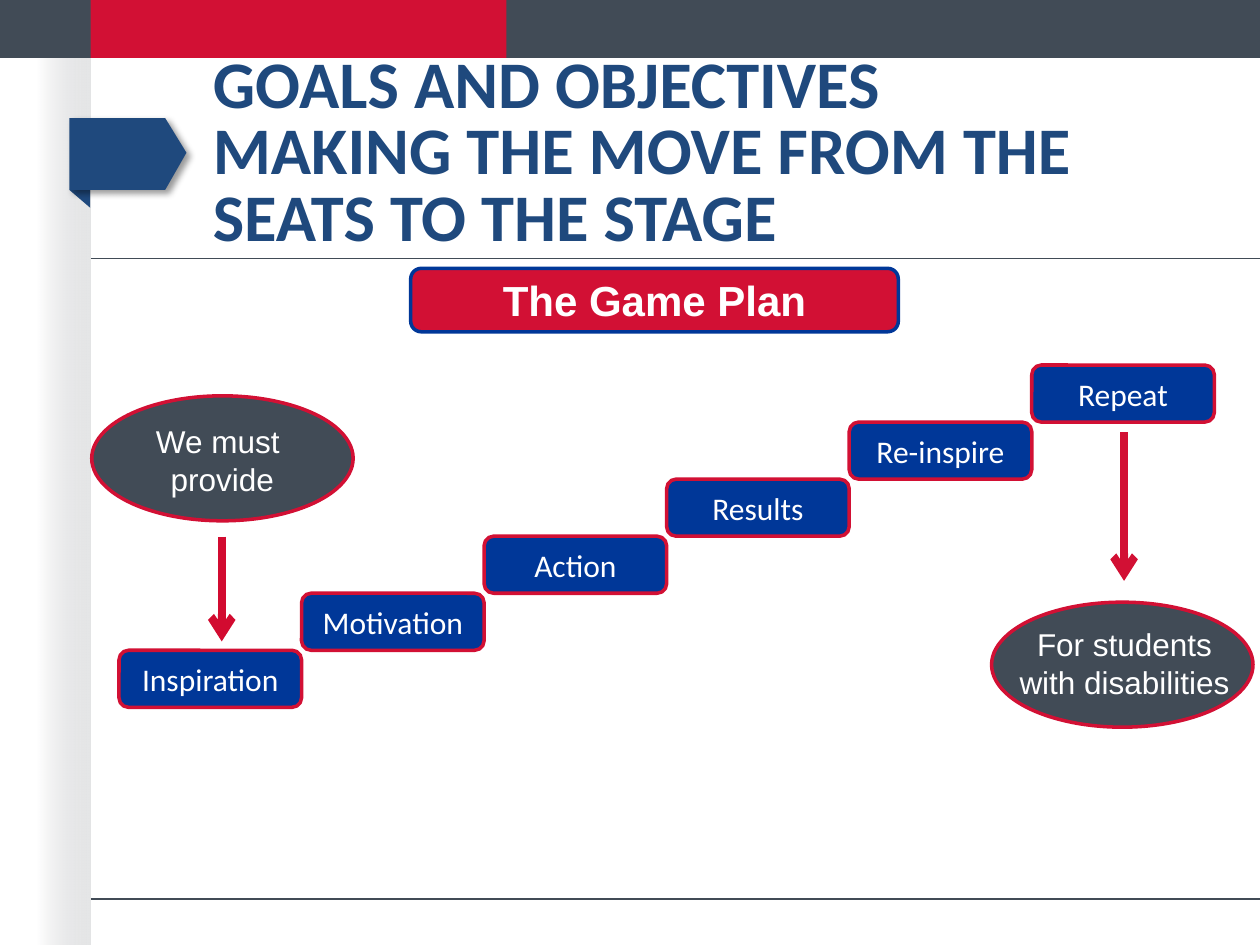
from dataclasses import dataclass

from lxml.etree import SubElement
from pptx import Presentation
from pptx.dml.color import RGBColor
from pptx.enum.shapes import MSO_CONNECTOR, MSO_SHAPE
from pptx.enum.text import MSO_ANCHOR, PP_ALIGN
from pptx.oxml.ns import qn
from pptx.util import Cm, Pt


@dataclass(frozen=True)
class Theme:
    slate: str = "414B56"
    red: str = "D21034"
    arrow_red: str = "D20B30"
    blue: str = "003798"
    navy: str = "1F497D"
    white: str = "FFFFFF"
    strip_start: str = "C8C9CC"
    strip_end: str = "E4E5E6"
    heading_font: str = "Calibri"
    body_font: str = "Arial"
    title_size: int = 38
    banner_size: int = 24
    body_size: int = 18


THEME = Theme()
STEPS = ["Inspiration", "Motivation", "Action", "Results", "Re-inspire", "Repeat"]


def rgb(color):
    return RGBColor.from_string(color)


def write(s, text, *, font=THEME.body_font, size=THEME.body_size, color=THEME.white,
          bold=False, align=PP_ALIGN.CENTER, anchor=MSO_ANCHOR.TOP, spacing=None):
    """Fill a shape with one paragraph; a newline becomes a line break."""
    tf = s.text_frame
    tf.word_wrap = True
    tf.vertical_anchor = anchor
    p = tf.paragraphs[0]
    p.alignment = align
    if spacing:
        p.line_spacing = Pt(spacing)
    for i, line in enumerate(text.split("\n")):
        if i:
            p.add_line_break()
        r = p.add_run()
        r.text = line
        r.font.name, r.font.size, r.font.bold = font, Pt(size), bold
        r.font.color.rgb = rgb(color)


def add_text(slide, box, text, **fmt):
    s = slide.shapes.add_textbox(*map(Cm, box))
    write(s, text, **fmt)


def paint(s, fill, line=None):
    s.shadow.inherit = False
    s.fill.solid()
    s.fill.fore_color.rgb = rgb(fill)
    if line:
        s.line.color.rgb = rgb(line)
        s.line.width = Pt(2)
    else:
        s.line.fill.background()


def add_block(slide, kind, box, fill, line=None):
    s = slide.shapes.add_shape(kind, *map(Cm, box))
    paint(s, fill, line)
    return s


def add_outline(slide, points, fill):
    start, *rest = [(Cm(x), Cm(y)) for x, y in points]
    builder = slide.shapes.build_freeform(*start)
    builder.add_line_segments(rest, close=True)
    s = builder.convert_to_shape()
    paint(s, fill)
    return s


def add_line(slide, start, end, color, width, arrow=False):
    s = slide.shapes.add_connector(MSO_CONNECTOR.STRAIGHT, *map(Cm, start + end))
    s.line.color.rgb = rgb(color)
    s.line.width = Pt(width)
    if arrow:
        SubElement(s.line._get_or_add_ln(), qn("a:tailEnd"), type="arrow")
    SubElement(s._element.spPr, qn("a:effectLst"))


def add_fading_strip(slide, box):
    """Vertical strip that goes from transparent at the left to grey."""
    s = add_block(slide, MSO_SHAPE.RECTANGLE, box, THEME.strip_end)
    s.fill.gradient()
    s.fill.gradient_angle = 0
    for stop, color in zip(s.fill.gradient_stops, (THEME.strip_start, THEME.strip_end)):
        stop.color.rgb = rgb(color)
    first = next(s._element.spPr.iter(qn("a:srgbClr")))
    SubElement(first, qn("a:alpha"), val="0")


def add_drop_shadow(s):
    effects = s._element.spPr.find(qn("a:effectLst"))
    shadow = SubElement(effects, qn("a:outerShdw"), blurRad=str(Pt(4)), dist=str(Pt(3)),
                        dir=str(45 * 60000), algn="tl", rotWithShape="0")
    color = SubElement(shadow, qn("a:srgbClr"), val="000000")
    SubElement(color, qn("a:alpha"), val="40000")


def add_frame(slide):
    add_fading_strip(slide, (0.76, 1.14, 1.07, 17.91))
    add_block(slide, MSO_SHAPE.RECTANGLE, (0, 0, 25.4, 1.17), THEME.slate)
    add_block(slide, MSO_SHAPE.RECTANGLE, (1.83, 0, 8.38, 1.17), THEME.red)
    for y in (5.21, 18.13):
        add_line(slide, (1.83, y), (25.4, y), THEME.slate, 1)
    add_outline(slide, [(1.4, 3.83), (1.82, 3.83), (1.82, 4.19)], THEME.navy)
    tag = add_outline(slide, [(1.4, 2.38), (1.4, 3.83), (3.33, 3.83),
                              (3.76, 3.08), (3.33, 2.38)], THEME.navy)
    add_drop_shadow(tag)


def add_staircase(slide):
    width, height, rise = 3.68, 1.15, 1.15
    for i, label in enumerate(STEPS):
        box = (2.4 + i * width, 13.11 - i * rise, width, height)
        s = add_block(slide, MSO_SHAPE.ROUNDED_RECTANGLE, box, THEME.blue, THEME.red)
        write(s, label, font=THEME.heading_font, anchor=MSO_ANCHOR.MIDDLE)


def add_bubble(slide, left, top, text, text_left, text_top):
    add_block(slide, MSO_SHAPE.OVAL, (left, top, 5.27, 2.52), THEME.slate, THEME.red)
    add_text(slide, (text_left, text_top, 4.8, 1.8), text)


def main():
    prs = Presentation()
    prs.slide_width, prs.slide_height = Cm(25.4), Cm(19.05)
    slide = prs.slides.add_slide(prs.slide_layouts[6])
    add_frame(slide)
    add_text(slide, (4.04, 1.45, 20.88, 3.35),
             "GOALS AND OBJECTIVES\nMAKING THE MOVE FROM THE SEATS TO THE STAGE",
             font=THEME.heading_font, size=THEME.title_size, color=THEME.navy, bold=True,
             align=PP_ALIGN.LEFT, anchor=MSO_ANCHOR.MIDDLE, spacing=THEME.title_size)
    banner = (8.28, 5.41, 9.83, 1.28)
    add_block(slide, MSO_SHAPE.ROUNDED_RECTANGLE, banner, THEME.red, THEME.blue)
    add_text(slide, banner, "The Game Plan", size=THEME.banner_size, bold=True)
    add_staircase(slide)
    add_bubble(slide, 1.85, 7.98, "We must \nprovide", 2.08, 8.38)
    add_line(slide, (4.47, 10.82), (4.47, 12.93), THEME.arrow_red, 4.5, arrow=True)
    add_bubble(slide, 19.99, 12.14, "For students with disabilities", 20.27, 12.47)
    add_line(slide, (22.66, 8.71), (22.66, 11.71), THEME.red, 4.5, arrow=True)
    prs.save("out.pptx")


if __name__ == "__main__":
    main()
